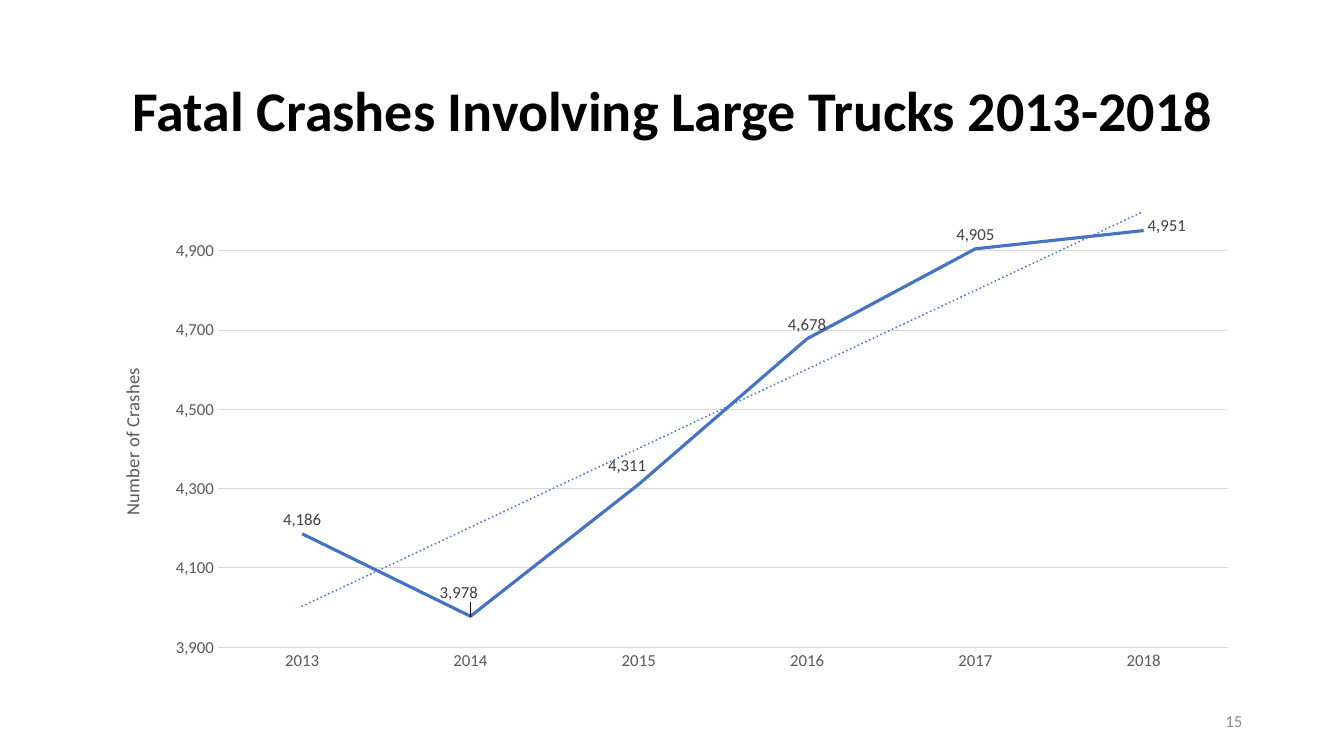
from dataclasses import dataclass
from typing import Any

from lxml.etree import SubElement
from pptx import Presentation
from pptx.chart.data import CategoryChartData
from pptx.dml.color import RGBColor
from pptx.enum.chart import XL_CHART_TYPE, XL_LABEL_POSITION, XL_TICK_MARK
from pptx.enum.text import MSO_ANCHOR, PP_ALIGN
from pptx.oxml import parse_xml
from pptx.oxml.ns import nsdecls, qn
from pptx.util import Inches, Pt

BLACK = RGBColor(0x00, 0x00, 0x00)
BLUE = RGBColor(0x44, 0x72, 0xC4)
DARK_GRAY = RGBColor(0x40, 0x40, 0x40)
AXIS_GRAY = RGBColor(0x59, 0x59, 0x59)
PAGE_GRAY = RGBColor(0x8C, 0x8C, 0x8C)
GRID_GRAY = RGBColor(0xD9, 0xD9, 0xD9)
FONT = "Calibri"
THOUSANDS = "#,##0"

CRASHES = {"2013": 4186, "2014": 3978, "2015": 4311,
           "2016": 4678, "2017": 4905, "2018": 4951}


@dataclass
class MovedLabel:
    index: int
    position: Any
    dx: float
    dy: float


MOVED_LABELS = [
    MovedLabel(1, XL_LABEL_POSITION.ABOVE, -0.01, -0.02),
    MovedLabel(2, XL_LABEL_POSITION.ABOVE, -0.01, -0.01),
    MovedLabel(5, XL_LABEL_POSITION.RIGHT, 0, -0.01),
]


def set_attrs(obj: Any, values: dict[str, Any]) -> None:
    for name, value in values.items():
        setattr(obj, name, value)


def set_font(font: Any, size: float, color: RGBColor, bold: bool = False) -> None:
    set_attrs(font, {"name": FONT, "size": Pt(size), "bold": bold})
    font.color.rgb = color


def set_line(line: Any, color: RGBColor, width: float) -> None:
    line.color.rgb = color
    line.width = Pt(width)


def make_layout(**values: Any) -> Any:
    """Build a manual chart layout from fractions of the chart area."""
    layout = parse_xml(f"<c:layout {nsdecls('c')}/>")
    manual = SubElement(layout, qn("c:manualLayout"))
    for name, value in values.items():
        SubElement(manual, qn(f"c:{name}")).set("val", str(value))
    return layout


def place_layout(parent: Any, layout: Any, index: int) -> None:
    for old in parent.findall(qn("c:layout")):
        parent.remove(old)
    parent.insert(index, layout)


def add_trendline(series: Any, color: RGBColor, width: float) -> None:
    trend = parse_xml(
        f"<c:trendline {nsdecls('c', 'a')}><c:spPr>"
        f'<a:ln w="{Pt(width)}" cap="rnd"><a:solidFill><a:srgbClr val="{color}"/>'
        '</a:solidFill><a:prstDash val="sysDot"/></a:ln></c:spPr>'
        '<c:trendlineType val="linear"/><c:dispRSqr val="0"/>'
        '<c:dispEq val="0"/></c:trendline>')
    series._element.find(qn("c:cat")).addprevious(trend)


def format_axes(chart: Any) -> None:
    years, counts = chart.category_axis, chart.value_axis
    for axis in (years, counts):
        set_attrs(axis, {"major_tick_mark": XL_TICK_MARK.NONE,
                         "minor_tick_mark": XL_TICK_MARK.NONE})
        set_font(axis.tick_labels.font, 12, AXIS_GRAY)
    set_line(years.format.line, GRID_GRAY, 0.75)
    set_attrs(counts, {"minimum_scale": 3900, "maximum_scale": 5000,
                       "major_unit": 200, "has_major_gridlines": True})
    set_attrs(counts.tick_labels, {"number_format": THOUSANDS,
                                   "number_format_is_linked": False})
    counts.format.line.fill.background()
    set_line(counts.major_gridlines.format.line, GRID_GRAY, 0.75)
    p = counts.axis_title.text_frame.paragraphs[0]
    r = p.add_run()
    r.text = "Number of Crashes"
    set_font(r.font, 13.3, AXIS_GRAY)
    place_layout(counts.axis_title._element,
                 make_layout(xMode="edge", yMode="edge", x=0.02, y=0.34), 1)


def format_series(series: Any) -> None:
    series.smooth = False
    series.marker.style = None
    SubElement(series._element.find(qn("c:marker")), qn("c:symbol")).set("val", "none")
    set_line(series.format.line, BLUE, 2.25)
    labels = series.data_labels
    set_attrs(labels, {"show_value": True, "position": XL_LABEL_POSITION.ABOVE,
                       "number_format": THOUSANDS, "number_format_is_linked": False})
    set_font(labels.font, 12, DARK_GRAY)
    for moved in MOVED_LABELS:
        label = series.points[moved.index].data_label
        set_font(label.font, 12, DARK_GRAY)
        label.position = moved.position
        for element in labels._element.findall(qn("c:dLbl")):
            if element.find(qn("c:idx")).get("val") == str(moved.index):
                place_layout(element, make_layout(x=moved.dx, y=moved.dy), 1)
    add_trendline(series, BLUE, 1.5)


def main() -> None:
    prs = Presentation()
    set_attrs(prs, {"slide_width": Inches(13.33), "slide_height": Inches(7.5)})
    s = prs.slides.add_slide(prs.slide_layouts[5])

    # Title
    title = s.shapes.title
    set_attrs(title, {"left": Inches(0.92), "top": Inches(0.4),
                      "width": Inches(11.5), "height": Inches(1.45)})
    tf = title.text_frame
    tf.text = "Fatal Crashes Involving Large Trucks 2013-2018"
    tf.vertical_anchor = MSO_ANCHOR.MIDDLE
    p = tf.paragraphs[0]
    set_attrs(p, {"alignment": PP_ALIGN.CENTER, "line_spacing": 0.9})
    set_font(p.runs[0].font, 40, BLACK, bold=True)

    # Line chart with trend
    data = CategoryChartData(number_format=THOUSANDS)
    data.categories = list(CRASHES)
    data.add_series("Series 1", list(CRASHES.values()))
    chart = s.shapes.add_chart(XL_CHART_TYPE.LINE, Inches(0.92), Inches(2),
                               Inches(11.5), Inches(4.76), data).chart
    set_attrs(chart, {"has_legend": False, "has_title": False})
    set_font(chart.font, 10, BLACK)
    chart.plots[0].vary_by_categories = False
    format_axes(chart)
    format_series(chart.plots[0].series[0])
    plot_area = chart._chartSpace.chart.plotArea
    place_layout(plot_area, make_layout(layoutTarget="inner", xMode="edge", yMode="edge",
                                        x=0.108, y=0.02, w=0.871, h=0.909), 0)

    # Page number
    box = s.shapes.add_textbox(Inches(9.42), Inches(6.95), Inches(3), Inches(0.4))
    tf = box.text_frame
    set_attrs(tf, {"word_wrap": True, "vertical_anchor": MSO_ANCHOR.MIDDLE})
    p = tf.paragraphs[0]
    p.alignment = PP_ALIGN.RIGHT
    r = p.add_run()
    r.text = "15"
    set_font(r.font, 12, PAGE_GRAY)

    prs.save("out.pptx")


if __name__ == "__main__":
    main()
